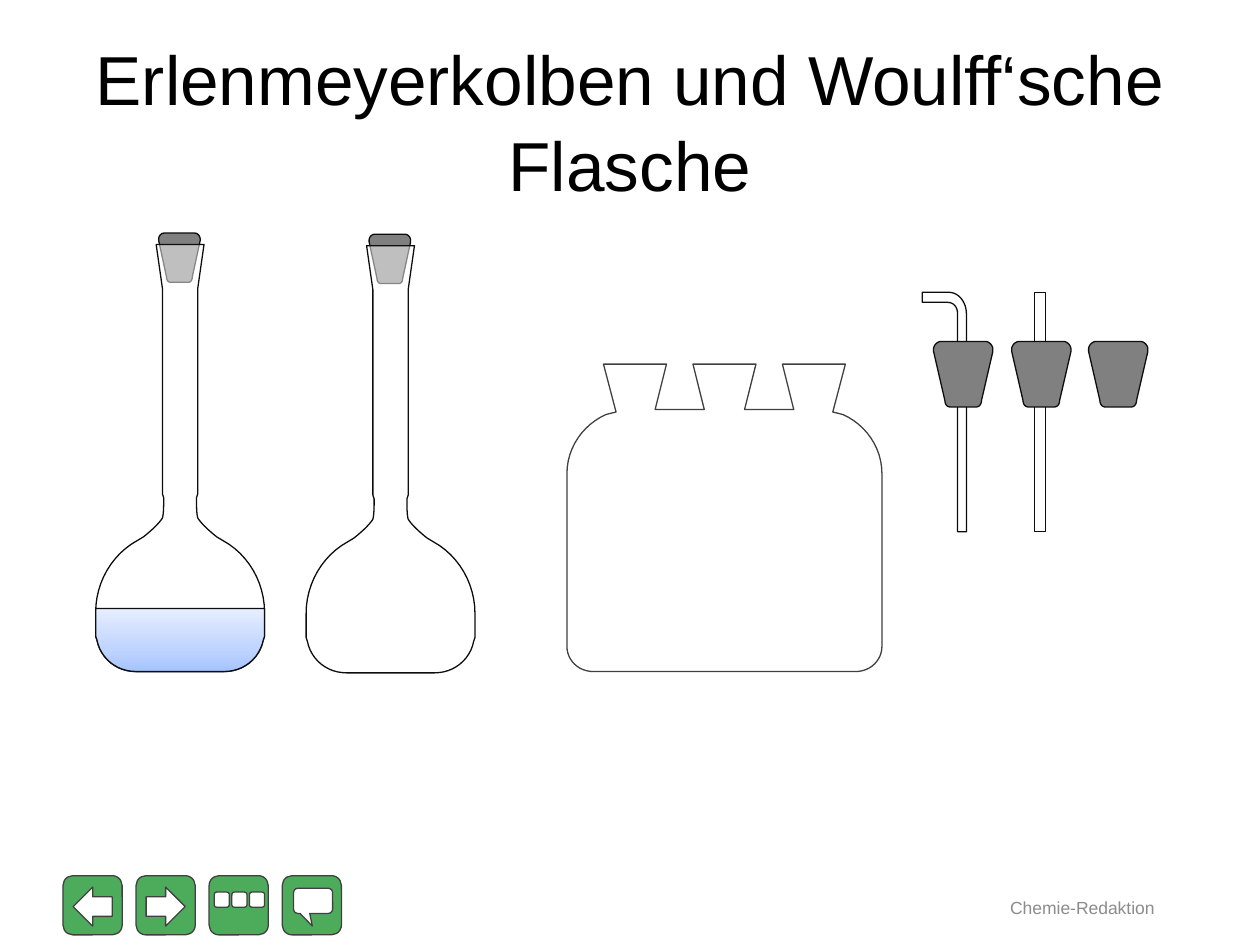
"""Build a slide with volumetric flasks, a three-necked bottle and stoppers."""
import copy

import pptx
import pptx.dml.color
import pptx.enum.shapes
import pptx.enum.text
import pptx.util
from pptx.util import Inches

SHAPE = pptx.enum.shapes.MSO_SHAPE
WHITE, BLACK, GREY, DARK, GREEN = "FFFFFF", "0D0D0D", "808080", "404040", "4DAC5C"
LIQUID = [(0, "A4C4FF"), (0.35, "BFD4FF"), (1, "E6EEFF")]

STOPPER = [(0.06, 0), (0.41, 0), (0.44, 0, 0.47, 0.03, 0.47, 0.06), (0.47, 0.08),
           (0.38, 0.47), (0.38, 0.5, 0.36, 0.52, 0.34, 0.52), (0.13, 0.52),
           (0.11, 0.52, 0.09, 0.5, 0.09, 0.47), (0, 0.08), (0, 0.06),
           (0, 0.03, 0.03, 0, 0.06, 0)]
FLASK_BASE = [(0.67, 3.11), (0.66, 3.14), (0.63, 3.29, 0.5, 3.39, 0.35, 3.39)]
FLASK_HALF = [(0.19, 0), (0.14, 0.35), (0.14, 1.98), (0.13, 2.01),
              (0.13, 2.07, 0.13, 2.13, 0.14, 2.17),
              (0.17, 2.22, 0.24, 2.28, 0.29, 2.32), (0.34, 2.35),
              (0.54, 2.46, 0.67, 2.68, 0.67, 2.92)] + FLASK_BASE
LIQUID_HALF = [(0.67, 2.89)] + FLASK_BASE
BOTTLE_HALF = [(0.25, 0), (0.16, 0.36), (0.55, 0.36), (0.46, 0), (0.96, 0),
               (0.86, 0.38), (0.94, 0.4), (1.12, 0.48, 1.25, 0.66, 1.25, 0.87),
               (1.25, 2.24), (1.25, 2.35, 1.16, 2.44, 1.04, 2.44)]
BENT_TUBE = [(0, 0), (0.21, 0), (0.29, 0, 0.35, 0.08, 0.35, 0.17), (0.35, 1.9),
             (0.28, 1.9), (0.28, 0.17), (0.28, 0.12, 0.25, 0.08, 0.2, 0.08), (0, 0.08)]


def rgb(value):
    """Return the colour for a hex string."""
    return pptx.dml.color.RGBColor.from_string(value)


def flatten(path, steps=12):
    """Turn line points and cubic curve tuples into a list of points."""
    pts = [path[0]]
    for seg in path[1:]:
        if len(seg) == 2:
            pts.append(seg)
            continue
        ctrl = [pts[-1], seg[:2], seg[2:4], seg[4:]]
        for i in range(1, steps + 1):
            t = i / steps
            weights = ((1 - t) ** 3, 3 * t * (1 - t) ** 2, 3 * t * t * (1 - t), t ** 3)
            pts.append(tuple(sum(w * c[k] for w, c in zip(weights, ctrl)) for k in (0, 1)))
    return pts


def mirrored(half):
    """Complete a right half outline with its mirror image about x = 0."""
    pts = flatten(half)
    return pts + [(-x, y) for x, y in reversed(pts)]


def set_gradient(fill, stops):
    """Give a fill a three-stop gradient that runs from bottom to top."""
    fill.gradient()
    fill.gradient_angle = 90
    first = fill.gradient_stops[0]._gs
    first.addnext(copy.deepcopy(first))
    for stop, (position, color) in zip(fill.gradient_stops, stops):
        stop.position = position
        stop.color.rgb = rgb(color)


def style(sp, fill, line, alpha=None):
    """Set fill, outline and optional opacity in percent."""
    sp.shadow.inherit = False
    if isinstance(fill, list):
        set_gradient(sp.fill, fill)
    else:
        sp.fill.solid()
        sp.fill.fore_color.rgb = rgb(fill)
    if alpha:
        color = sp.fill._xPr.find(".//" + pptx.oxml.ns.qn("a:srgbClr"))
        color.append(pptx.oxml.parse_xml(
            f'<a:alpha {pptx.oxml.ns.nsdecls("a")} val="{alpha * 1000}"/>'))
    sp.line.color.rgb = rgb(line)
    sp.line.width = pptx.util.Pt(0.75)


def add_outline(s, x, y, pts, fill, line=BLACK, alpha=None, scale=(1, 1)):
    """Draw a closed freeform with its own origin at x, y."""
    emu = [(Inches(x + px * scale[0]), Inches(y + py * scale[1])) for px, py in pts]
    builder = s.shapes.build_freeform(*emu[0])
    builder.add_line_segments(emu[1:], close=True)
    style(builder.convert_to_shape(), fill, line, alpha)


def add_preset(s, kind, x, y, w, h, fill=WHITE, line=DARK):
    """Draw a preset shape and return it."""
    sp = s.shapes.add_shape(kind, Inches(x), Inches(y), Inches(w), Inches(h))
    style(sp, fill, line)
    return sp


def add_text(s, x, y, w, h, text, size, color, spacing=1):
    """Add a centred text box."""
    tf = s.shapes.add_textbox(Inches(x), Inches(y), Inches(w), Inches(h)).text_frame
    tf.word_wrap = True
    tf.vertical_anchor = pptx.enum.text.MSO_ANCHOR.MIDDLE
    p = tf.paragraphs[0]
    p.alignment = pptx.enum.text.PP_ALIGN.CENTER
    p.line_spacing = spacing
    r = p.add_run()
    r.text = text
    for name, value in {"name": "Arial", "size": pptx.util.Pt(size)}.items():
        setattr(r.font, name, value)
    r.font.color.rgb = rgb(color)


def add_navigation(s):
    """Draw the four green buttons and their symbols."""
    for x in (0.5, 1.08, 1.66, 2.24):
        add_preset(s, SHAPE.ROUNDED_RECTANGLE, x, 6.95, 0.47, 0.47, GREEN)
    for x, angle in ((0.58, 180), (1.16, 0)):
        add_preset(s, SHAPE.RIGHT_ARROW, x, 7.04, 0.31, 0.31).rotation = angle
    for i in range(3):
        add_preset(s, SHAPE.ROUNDED_RECTANGLE, 1.7 + 0.14 * i, 7.08, 0.12, 0.12)
    sp = add_preset(s, SHAPE.ROUNDED_RECTANGULAR_CALLOUT, 2.33, 7.05, 0.31, 0.2)
    for i, value in enumerate((-0.02, 1, 0.17)):
        sp.adjustments[i] = value


def add_flask(s, center, top, filled):
    """Draw a stoppered flask, with liquid when filled."""
    add_outline(s, center - 0.17, top - 0.09, flatten(STOPPER), GREY, scale=(0.7, 0.75))
    add_outline(s, center, top, mirrored(FLASK_HALF), WHITE, alpha=50)
    if filled:
        add_outline(s, center, top, mirrored(LIQUID_HALF), LIQUID)


def add_stoppers(s):
    """Draw the bent tube, the straight tube and the three large stoppers."""
    add_outline(s, 7.32, 2.32, flatten(BENT_TUBE), WHITE)
    add_preset(s, SHAPE.RECTANGLE, 8.21, 2.32, 0.09, 1.9, WHITE, BLACK)
    for x in (7.41, 8.03, 8.64):
        add_outline(s, x, 2.71, flatten(STOPPER), GREY)


def main():
    """Build and save the slide."""
    prs = pptx.Presentation()
    prs.slide_width, prs.slide_height = Inches(10), Inches(7.5)
    s = prs.slides.add_slide(prs.slide_layouts[6])
    add_navigation(s)
    add_text(s, 7.89, 7.06, 1.4, 0.28, "Chemie-Redaktion", 10, "8C8C8C")
    add_text(s, 0.5, 0.32, 9, 1.25, "Erlenmeyerkolben und Woulff‘sche Flasche",
             39.6, "000000", 1.04)
    add_flask(s, 1.43, 1.94, True)
    add_flask(s, 3.1, 1.95, False)
    add_stoppers(s)
    add_outline(s, 5.75, 2.89, mirrored(BOTTLE_HALF), WHITE, DARK, 50)
    prs.save("out.pptx")


if __name__ == "__main__":
    main()
